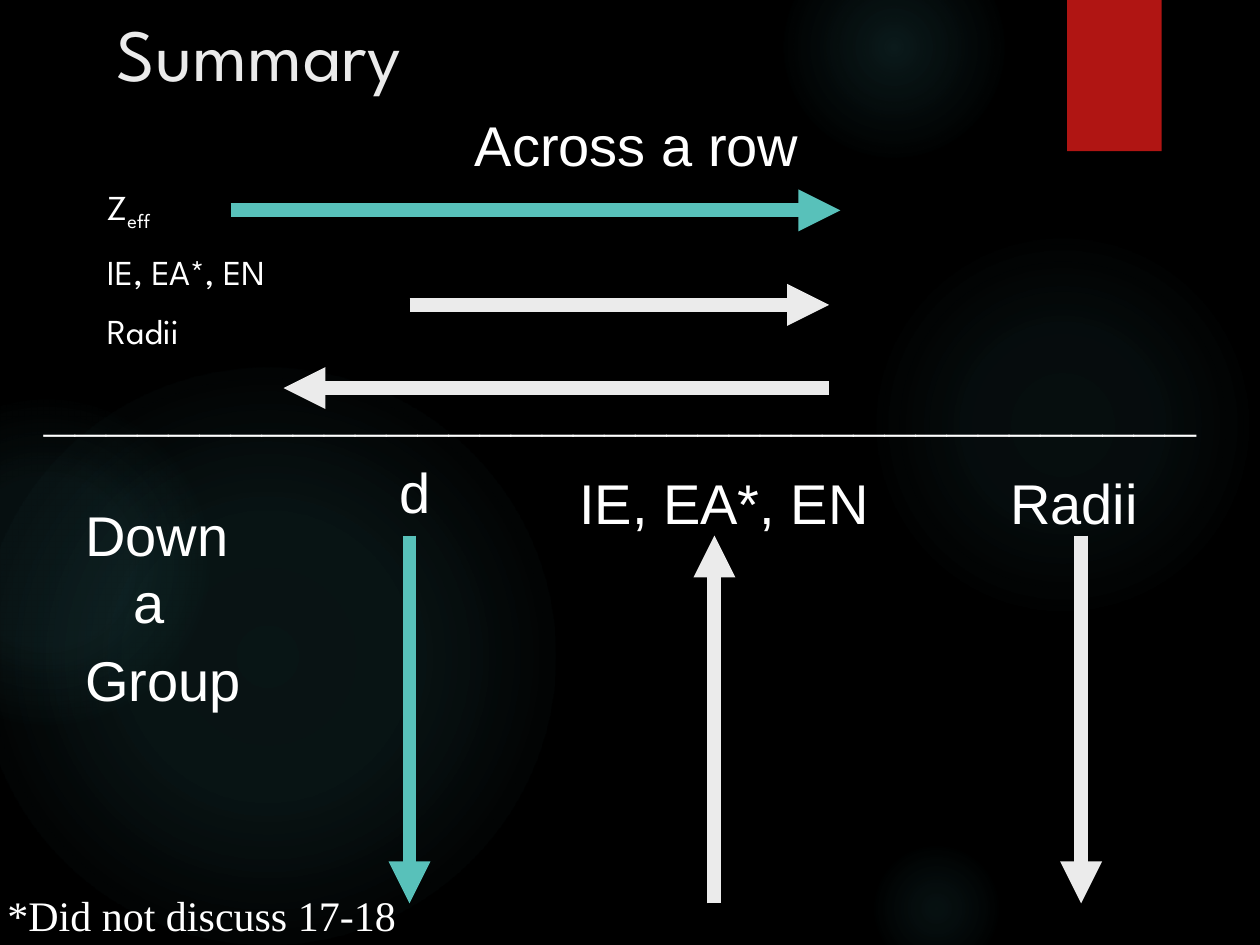
"""Build the periodic trends summary slide."""
from lxml.etree import SubElement
from pptx import Presentation
from pptx.dml.color import RGBColor
from pptx.enum.shapes import MSO_CONNECTOR, MSO_SHAPE
from pptx.enum.text import MSO_ANCHOR
from pptx.oxml import parse_xml
from pptx.oxml.ns import nsdecls, qn
from pptx.util import Inches, Pt

BLACK = RGBColor(0x00, 0x00, 0x00)
WHITE = RGBColor(0xFF, 0xFF, 0xFF)
PALE = RGBColor(0xEB, 0xEB, 0xEB)
TEAL = RGBColor(0x58, 0xC1, 0xBA)
GLOW = RGBColor(0x50, 0xB9, 0xC1)
RED = RGBColor(0xB0, 0x15, 0x13)

TITLE = {"name": "League Spartan", "size": Pt(42)}
BODY = {"name": "League Spartan", "size": Pt(20)}
LABEL = {"name": "Arial", "size": Pt(32)}
RULE = {"name": "Arial", "size": Pt(32), "bold": True}
NOTE = {"name": "Times New Roman", "size": Pt(24)}


def add_text(page, place, lines, style, color=WHITE, before=0, left=0.0, hanging=0.0):
    box = page.shapes.add_textbox(*map(Inches, place))
    frame = box.text_frame
    frame.word_wrap = True
    for index, line in enumerate(lines):
        para = frame.paragraphs[0] if index == 0 else frame.add_paragraph()
        para.space_before = Pt(before)
        properties = para._p.get_or_add_pPr()
        properties.set("marL", str(Inches(left)))
        properties.set("indent", str(-Inches(hanging)))
        for position, words in enumerate(line.split("|")):
            span = para.add_run()
            span.text = words
            for name, value in style.items():
                setattr(span.font, name, value)
            span.font.color.rgb = color
            if position == 1:
                span.font._element.set("baseline", "-25000")
    return box


def add_arrow(page, start, end, color):
    arrow = page.shapes.add_connector(MSO_CONNECTOR.STRAIGHT, *map(Inches, start + end))
    arrow.line.color.rgb = color
    arrow.line.width = Pt(8)
    SubElement(arrow.line._get_or_add_ln(), qn("a:tailEnd"), type="triangle")
    SubElement(arrow._element.spPr, qn("a:effectLst"))


deck = Presentation()
deck.slide_width = Inches(10)
deck.slide_height = Inches(7.5)
page = deck.slides.add_slide(deck.slide_layouts[6])
page.background.fill.solid()
page.background.fill.fore_color.rgb = BLACK

glows = [
    (6.89, 1.83, 3.08, [(0, 7), (36, 6), (69, 0)]),
    (6.22, -0.5, 1.75, [(0, 14), (36, 7), (73, 0)]),
    (6.89, 6.67, 1.08, [(0, 9), (36, 5), (66, 0)]),
    (-0.17, 2.92, 4.58, [(0, 11), (36, 10), (75, 0)]),
    (-0.92, 3.17, 2.58, [(0, 8), (36, 8), (72, 0)]),
]
for left, top, size, stops in glows:
    glow = page.shapes.add_shape(MSO_SHAPE.OVAL, *map(Inches, (left, top, size, size)))
    glow.shadow.inherit = False
    glow.line.fill.background()
    stop_list = "".join(
        f'<a:gs pos="{place * 1000}"><a:srgbClr val="{GLOW}">'
        f'<a:alpha val="{alpha * 1000}"/></a:srgbClr></a:gs>'
        for place, alpha in stops
    )
    gradient = parse_xml(
        f'<a:gradFill {nsdecls("a")} rotWithShape="1"><a:gsLst>{stop_list}</a:gsLst>'
        '<a:path path="circle"><a:fillToRect l="50000" t="50000" r="50000" b="50000"/>'
        "</a:path></a:gradFill>"
    )
    glow._element.spPr.find(qn("a:prstGeom")).addnext(gradient)

ribbon = page.shapes.add_shape(MSO_SHAPE.RECTANGLE, *map(Inches, (8.47, 0, 0.75, 1.2)))
ribbon.shadow.inherit = False
ribbon.fill.solid()
ribbon.fill.fore_color.rgb = RED
ribbon.line.fill.background()
effects = ribbon._element.spPr.find(qn("a:effectLst"))
shadow = SubElement(effects, qn("a:outerShdw"), blurRad=str(Pt(3)), dist=str(Pt(2)),
                    dir="5400000", rotWithShape="0")
shade = SubElement(shadow, qn("a:srgbClr"), val=str(BLACK))
SubElement(shade, qn("a:alpha"), val="45000")

title = add_text(page, (0.83, 0, 8.5, 0.83), ["Summary"], TITLE, PALE)
title.text_frame.vertical_anchor = MSO_ANCHOR.MIDDLE
add_text(page, (0.75, 1.42, 2.58, 2.08), ["Z|eff", "IE, EA*, EN", "Radii"], BODY,
         before=10, left=0.38, hanging=0.38)

labels = [
    ((3.67, 0.83, 3.17, 0.67), ["Across a row"], LABEL),
    ((0.58, 3.92, 1.67, 3.17), ["Down a", "Group"], LABEL),
    ((4.5, 3.67, 2.58, 3.42), ["IE, EA*, EN"], LABEL),
    ((7.92, 3.67, 1.33, 3.42), ["Radii"], LABEL),
    ((0.25, 2.92, 9.5, 0.75), ["_" * 37], RULE),
]
for place, lines, style in labels:
    add_text(page, place, lines, style, before=6.4, left=0.38, hanging=0.38)
add_text(page, (2.58, 3.58, 1.42, 3.42), ["d"], LABEL, before=6.4, left=0.49)

arrows = [
    ((1.83, 1.67), (6.67, 1.67), TEAL),
    ((3.25, 2.42), (6.58, 2.42), PALE),
    ((6.58, 3.08), (2.25, 3.08), PALE),
    ((3.25, 4.25), (3.25, 7.17), TEAL),
    ((5.67, 7.17), (5.67, 4.25), PALE),
    ((8.58, 4.25), (8.58, 7.17), PALE),
]
for start, end, color in arrows:
    add_arrow(page, start, end, color)

add_text(page, (-0.04, 7.01, 3.5, 0.5), ["*Did not discuss 17-18"], NOTE)

deck.save("out.pptx")
